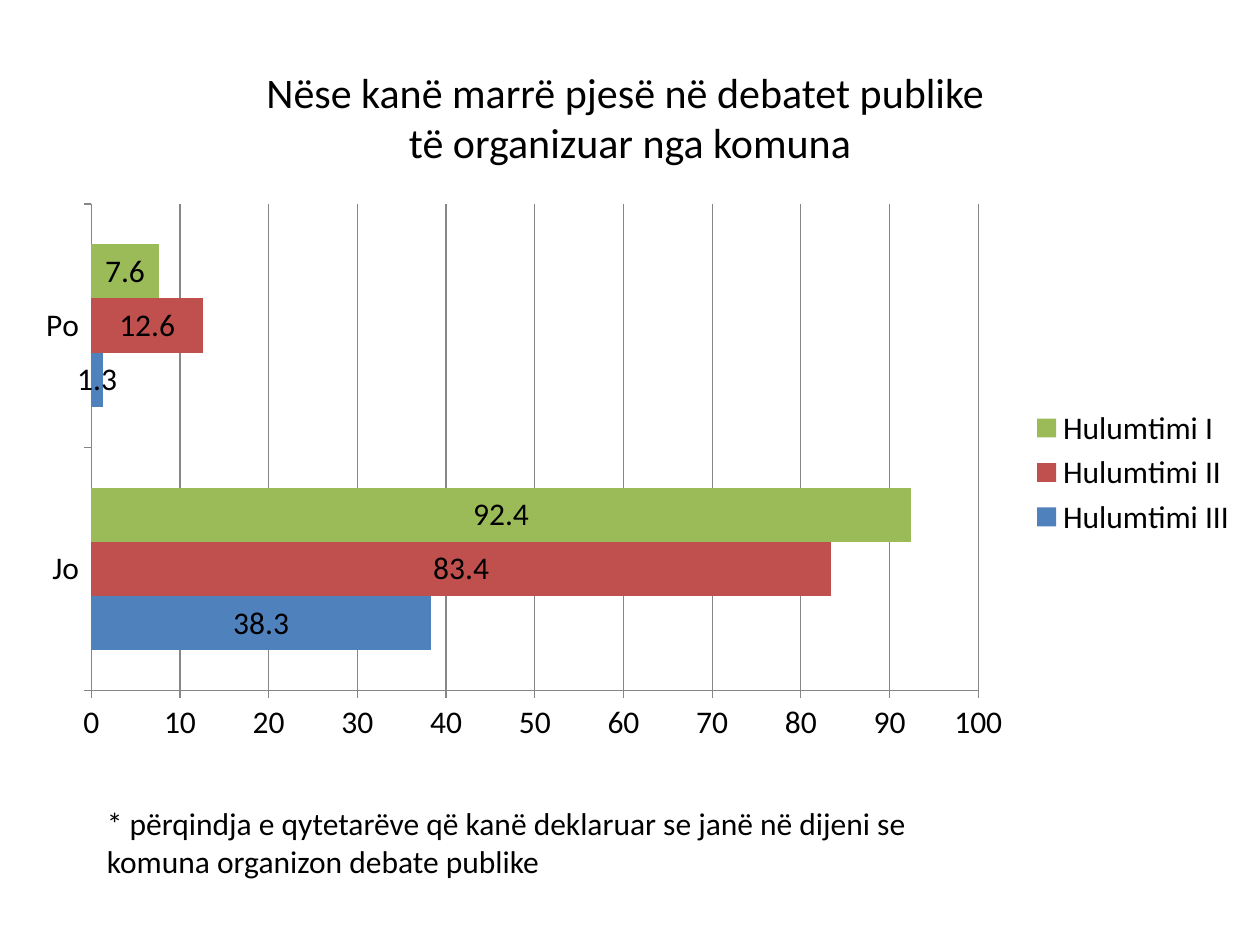
from pptx import Presentation
from pptx.chart.data import CategoryChartData
from pptx.dml.color import RGBColor
from pptx.enum.chart import XL_CHART_TYPE, XL_LABEL_POSITION, XL_LEGEND_POSITION, XL_TICK_MARK
from pptx.enum.text import MSO_ANCHOR, MSO_AUTO_SIZE, PP_ALIGN
from pptx.util import Inches, Pt

# Content
TITLE = "Nëse kanë marrë pjesë në debatet publike \vtë organizuar nga komuna"
FOOTNOTE = ("* përqindja e qytetarëve që kanë deklaruar se janë në dijeni se "
            "komuna organizon debate publike")
ANSWERS = ["Jo", "Po"]
SURVEYS = [
    ("Hulumtimi III", (38.3, 1.3), "blue"),
    ("Hulumtimi II", (83.4, 12.6), "red"),
    ("Hulumtimi I", (92.4, 7.6), "green"),
]
COLORS = {"blue": "4F81BD", "red": "C0504D", "green": "9BBB59",
          "text": "000000", "line": "868686"}
FONT = "Calibri"

# Left, top, width, height in inches
TITLE_BOX = (0.5, 0.3, 9, 1.25)
CHART_BOX = (0.17, 1.53, 9.75, 4.44)
FOOTNOTE_BOX = (0.75, 6.33, 7.25, 0.71)


def color(name):
    return RGBColor.from_string(COLORS[name])


def style_font(font, size):
    font.name = FONT
    font.size = Pt(size)
    font.color.rgb = color("text")


def style_line(line):
    line.color.rgb = color("line")
    line.width = Pt(0.75)


def place(box):
    return [Inches(length) for length in box]


prs = Presentation()
prs.slide_width, prs.slide_height = Inches(10), Inches(7.5)
slide = prs.slides.add_slide(prs.slide_layouts[5])

# Title
title = slide.shapes.title
title.left, title.top, title.width, title.height = place(TITLE_BOX)
title.text_frame.text = TITLE
title.text_frame.vertical_anchor = MSO_ANCHOR.MIDDLE
heading = title.text_frame.paragraphs[0]
heading.alignment = PP_ALIGN.CENTER
for run in heading.runs:
    style_font(run.font, 24)

# Bar chart
survey_data = CategoryChartData(number_format="General")
survey_data.categories = ANSWERS
for name, shares, _ in SURVEYS:
    survey_data.add_series(name, shares)
chart = slide.shapes.add_chart(
    XL_CHART_TYPE.BAR_CLUSTERED, *place(CHART_BOX), survey_data).chart
chart.has_title = False
style_font(chart.font, 18)
chart.has_legend = True
chart.legend.position = XL_LEGEND_POSITION.RIGHT
chart.legend.include_in_layout = False

bars = chart.plots[0]
bars.gap_width = 150
bars.vary_by_categories = False
for series, (_, _, fill_name) in zip(bars.series, SURVEYS):
    series.format.fill.solid()
    series.format.fill.fore_color.rgb = color(fill_name)
    labels = series.data_labels
    labels.show_value = True
    labels.position = XL_LABEL_POSITION.CENTER
    style_font(labels.font, 18)

# Axes
for axis in (chart.category_axis, chart.value_axis):
    axis.major_tick_mark = XL_TICK_MARK.OUTSIDE
    axis.minor_tick_mark = XL_TICK_MARK.NONE
    style_line(axis.format.line)
chart.category_axis.has_major_gridlines = False
shares_axis = chart.value_axis
shares_axis.minimum_scale, shares_axis.maximum_scale = 0, 100
shares_axis.major_unit = 10
shares_axis.has_major_gridlines = True
style_line(shares_axis.major_gridlines.format.line)

# Footnote
footnote = slide.shapes.add_textbox(*place(FOOTNOTE_BOX)).text_frame
footnote.word_wrap = True
footnote.auto_size = MSO_AUTO_SIZE.SHAPE_TO_FIT_TEXT
footnote.text = FOOTNOTE
style_font(footnote.paragraphs[0].runs[0].font, 18)

prs.save("out.pptx")
